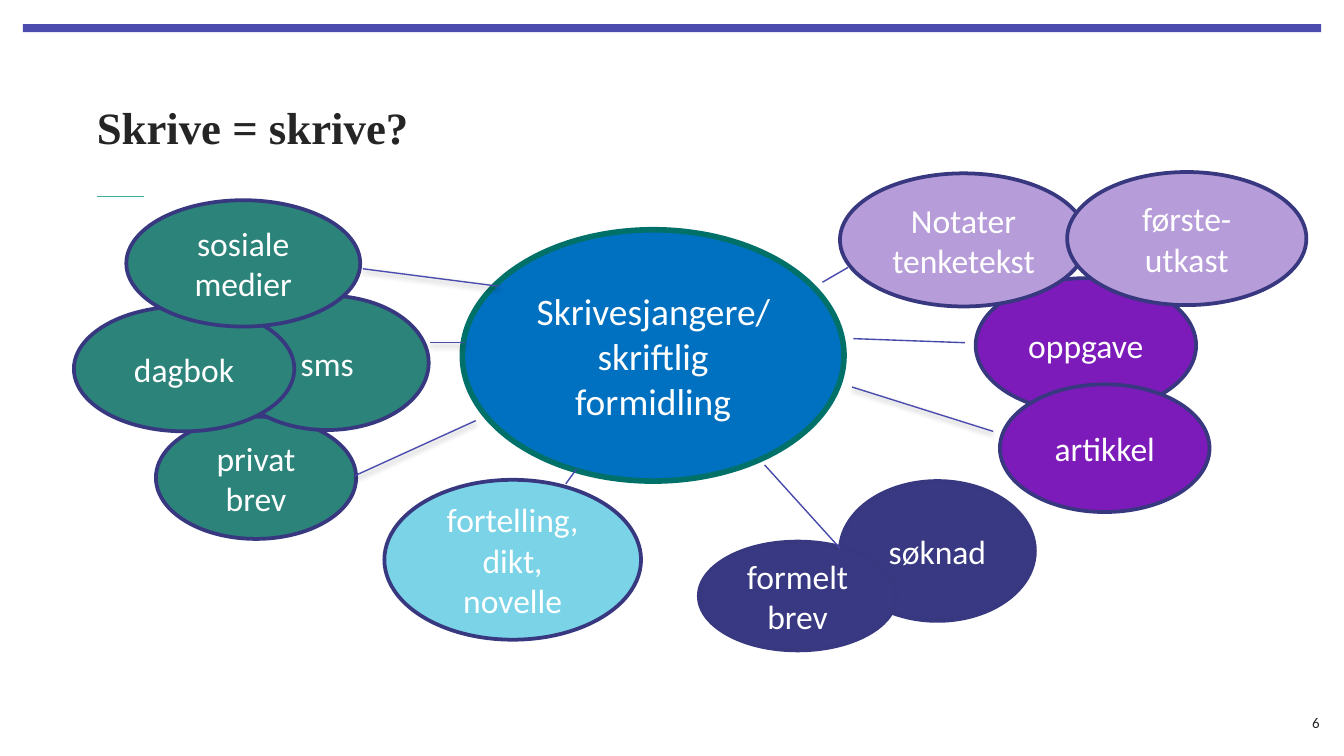
"""Builds a slide that maps writing genres around a central theme."""
from lxml.etree import SubElement
from pptx import Presentation
from pptx.dml.color import RGBColor
from pptx.enum.shapes import MSO_CONNECTOR, MSO_SHAPE
from pptx.enum.text import MSO_ANCHOR, PP_ALIGN
from pptx.oxml.ns import qn
from pptx.util import Inches, Pt

INK = RGBColor(0x25, 0x25, 0x25)
WHITE = RGBColor(0xFF, 0xFF, 0xFF)
INDIGO = RGBColor(0x4B, 0x4C, 0xAD)
VIOLET_BLUE = RGBColor(0x47, 0x48, 0xAC)
OUTLINE = RGBColor(0x37, 0x38, 0x80)
NAVY = RGBColor(0x38, 0x39, 0x82)
TURQUOISE = RGBColor(0x3B, 0xAF, 0xA2)
BLUE = RGBColor(0x00, 0x70, 0xC0)
DARK_TEAL = RGBColor(0x00, 0x71, 0x68)
TEAL = RGBColor(0x2C, 0x83, 0x7A)
PURPLE = RGBColor(0x7D, 0x1A, 0xBA)
LILAC = RGBColor(0xB6, 0x9C, 0xD8)
SKY = RGBColor(0x7A, 0xD3, 0xE6)

GENRES = [
    ("privat brev", TEAL, (1.16, 3.1, 1.49, 0.91)),
    ("sms", TEAL, (1.68, 2.2, 1.51, 1)),
    ("oppgave", PURPLE, (7.26, 2.07, 1.64, 1)),
    ("søknad", NAVY, (6.25, 3.58, 1.45, 1.04)),
    ("artikkel", PURPLE, (7.44, 2.86, 1.56, 0.95)),
    ("dagbok", TEAL, (0.55, 2.28, 1.64, 0.93)),
    ("formelt brev", NAVY, (5.2, 4.03, 1.47, 0.81)),
    ("Notater\ntenketekst", LILAC, (6.25, 1.29, 1.84, 0.99)),
    ("sosiale medier", TEAL, (0.94, 1.49, 1.74, 0.94)),
    ("første-utkast", LILAC, (7.94, 1.28, 1.78, 0.99)),
    ("fortelling, dikt, novelle", SKY, (2.86, 3.57, 1.91, 1.19)),
]
PLAIN_LINKS = [
    ((4.29, 3.49), (4.21, 3.6)),
    ((5.69, 3.46), (6.25, 4.08)),
    ((6.35, 2.52), (7.18, 2.55)),
    ((6.12, 2.1), (6.31, 1.99)),
]
SHADOWED_LINKS = [
    ((6.34, 2.88), (7.39, 3.21)),
    ((3.71, 2.13), (2.7, 2)),
    ((3.46, 2.55), (3.2, 2.55)),
    ((3.54, 3.13), (2.64, 3.54)),
]


def write_text(frame, text, size=18, font="Calibri", color=WHITE, bold=False,
               align=PP_ALIGN.CENTER):
    frame.word_wrap = True
    frame.vertical_anchor = MSO_ANCHOR.MIDDLE
    frame.text = text
    for paragraph in frame.paragraphs:
        paragraph.alignment = align
        paragraph.font.size = Pt(size)
        paragraph.font.name = font
        paragraph.font.bold = bold
        paragraph.font.color.rgb = color


class GenreMap:
    def __init__(self, slide, outline=OUTLINE, outline_width=2):
        self.slide = slide
        self.outline = outline
        self.outline_width = outline_width

    def bar(self, box, color):
        shape = self.slide.shapes.add_shape(MSO_SHAPE.RECTANGLE, *map(Inches, box))
        shape.shadow.inherit = False
        shape.fill.solid()
        shape.fill.fore_color.rgb = color
        shape.line.fill.background()

    def label(self, box, text, **text_format):
        frame = self.slide.shapes.add_textbox(*map(Inches, box)).text_frame
        frame.margin_left = frame.margin_right = 0
        frame.margin_top = frame.margin_bottom = 0
        write_text(frame, text, **text_format)

    def bubble(self, box, text, fill, outline=None, width=None, **text_format):
        shape = self.slide.shapes.add_shape(MSO_SHAPE.OVAL, *map(Inches, box))
        shape.shadow.inherit = False
        shape.fill.solid()
        shape.fill.fore_color.rgb = fill
        shape.line.color.rgb = outline or self.outline
        shape.line.width = Pt(width or self.outline_width)
        write_text(shape.text_frame, text, **text_format)

    def link(self, start, end, color, width=0.75, shadow=False):
        connector = self.slide.shapes.add_connector(
            MSO_CONNECTOR.STRAIGHT, *map(Inches, start + end))
        connector.line.color.rgb = color
        connector.line.width = Pt(width)
        effects = SubElement(connector._element.spPr, qn("a:effectLst"))
        if shadow:
            outer = SubElement(effects, qn("a:outerShdw"), blurRad=str(Pt(3.1)),
                               dist=str(Pt(1.6)), dir="5400000", rotWithShape="0")
            black = SubElement(outer, qn("a:srgbClr"), val="000000")
            SubElement(black, qn("a:alpha"), val="38000")


def main():
    presentation = Presentation()
    presentation.slide_width = Inches(10)
    presentation.slide_height = Inches(10 * 9 / 16)
    slide = presentation.slides.add_slide(presentation.slide_layouts[6])
    genre_map = GenreMap(slide)

    genre_map.bar((0.17, 0.18, 9.66, 0.06), INDIGO)
    genre_map.link((0.72, 1.46), (1.07, 1.46), TURQUOISE, width=0.5)
    genre_map.label((0.72, 0.47, 8.71, 0.94), "Skrive = skrive?", size=24,
                    font="Times New Roman", color=INK, bold=True, align=PP_ALIGN.LEFT)
    genre_map.label((7.49, 5.29, 2.33, 0.17), "6", size=8, color=INK,
                    align=PP_ALIGN.RIGHT)
    genre_map.bubble((3.44, 1.71, 2.84, 1.87), "Skrivesjangere/skriftlig formidling",
                     BLUE, outline=DARK_TEAL, width=3, size=20)
    for text, fill, box in GENRES:
        genre_map.bubble(box, text, fill)
    for start, end in PLAIN_LINKS:
        genre_map.link(start, end, VIOLET_BLUE)
    for start, end in SHADOWED_LINKS:
        genre_map.link(start, end, INDIGO, shadow=True)

    presentation.save("out.pptx")


if __name__ == "__main__":
    main()
